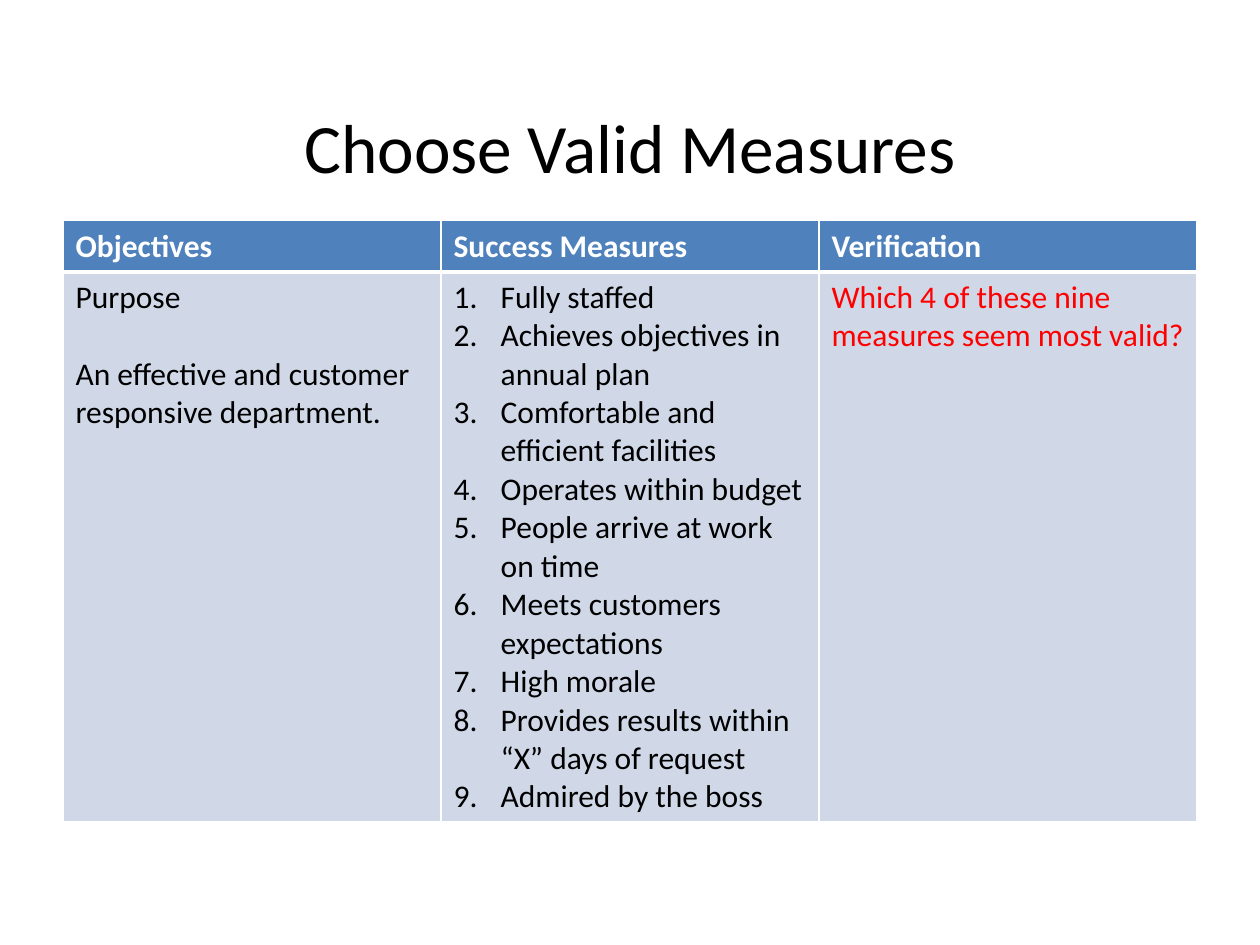
import dataclasses

import pptx
import pptx.dml.color
import pptx.enum.text
import pptx.oxml.xmlchemy
import pptx.util
from lxml import etree
from pptx.oxml.ns import qn

Cm = pptx.util.Cm
Pt = pptx.util.Pt


@dataclasses.dataclass(frozen=True)
class Theme:
    face: str = "Calibri"
    ink: str = "000000"
    white: str = "FFFFFF"
    red: str = "FF0000"
    head: str = "4F81BD"
    body: str = "D0D8E8"
    title: float = 39.6
    text: float = 18
    thin: float = 1
    thick: float = 3


class Deck:
    def __init__(self, theme):
        self.theme = theme
        self.prs = pptx.Presentation()
        self.prs.slide_width = Cm(25.4)
        self.prs.slide_height = Cm(19.05)
        self.slide = self.prs.slides.add_slide(self.prs.slide_layouts[6])

    def style(self, para, size, color, bold=False):
        look = {"name": self.theme.face, "size": Pt(size), "bold": bold}
        for run in para.runs:
            for key, value in look.items():
                setattr(run.font, key, value)
            run.font.color.rgb = pptx.dml.color.RGBColor.from_string(color)

    def title(self, text, left, top, width, height):
        box = self.slide.shapes.add_textbox(left, top, width, height)
        frame = box.text_frame
        frame.word_wrap = True
        frame.vertical_anchor = pptx.enum.text.MSO_ANCHOR.MIDDLE
        para = frame.paragraphs[0]
        para.text = text
        para.alignment = pptx.enum.text.PP_ALIGN.CENTER
        self.style(para, self.theme.title, self.theme.ink)

    def number(self, para):
        """Give the paragraph an automatic number and a hanging indent."""
        props = para._p.get_or_add_pPr()
        props.set("marL", str(Cm(0.95)))
        props.set("indent", str(-Cm(0.95)))
        etree.SubElement(props, qn("a:buFont"), typeface="+mj-lt")
        etree.SubElement(props, qn("a:buAutoNum"), type="arabicPeriod")

    def border(self, cell, widths):
        """Draw white cell edges; widths maps a side (L, R, T, B) to points."""
        props = cell._tc.get_or_add_tcPr()
        for side, width in widths.items():
            line = etree.SubElement(props, qn(f"a:ln{side}"), w=str(Pt(width)))
            fill = etree.SubElement(line, qn("a:solidFill"))
            etree.SubElement(fill, qn("a:srgbClr"), val=self.theme.white)

    def cell(self, cell, lines, fill, color, bold=False, listed=False, gap=0):
        theme = self.theme
        thin, thick = theme.thin, theme.thick
        top, low = (thin, thick) if fill == theme.head else (thick, thin)
        self.border(cell, {"L": thin, "R": thin, "T": top, "B": low})
        cell.fill.solid()
        cell.fill.fore_color.rgb = pptx.dml.color.RGBColor.from_string(fill)
        frame = cell.text_frame
        for i, line in enumerate(lines):
            para = frame.add_paragraph() if i else frame.paragraphs[0]
            para.text = line
            if i and gap:
                para.space_before = Pt(gap)
            if listed:
                self.number(para)
            self.style(para, theme.text, color, bold)

    def table(self, heads, cells, left, top, width, heights):
        shape = self.slide.shapes.add_table(
            2, len(heads), left, top, width, sum(heights))
        grid = shape.table
        grid.horz_banding = False
        for row, height in zip(grid.rows, heights):
            row.height = height
        for i, (head, form) in enumerate(zip(heads, cells)):
            grid.columns[i].width = width // len(heads)
            self.cell(grid.cell(0, i), [head], self.theme.head,
                      self.theme.white, bold=True)
            self.cell(grid.cell(1, i), fill=self.theme.body, **form)


def main():
    theme = Theme()
    deck = Deck(theme)
    left, width = Cm(1.27), Cm(22.86)
    deck.title("Choose Valid Measures", left, Cm(1.93), width, Cm(2.01))
    goals = ["Purpose", "An effective and customer responsive department."]
    tests = [
        "Fully staffed",
        "Achieves objectives in annual plan",
        "Comfortable and efficient facilities",
        "Operates within budget",
        "People arrive at work on time",
        "Meets customers expectations",
        "High morale",
        "Provides results within “X” days of request",
        "Admired by the boss",
    ]
    query = ["Which 4 of these nine measures seem most valid?"]
    deck.table(
        ["Objectives", "Success Measures", "Verification"],
        [
            {"lines": goals, "color": theme.ink, "gap": 22},
            {"lines": tests, "color": theme.ink, "listed": True},
            {"lines": query, "color": theme.red},
        ],
        left, Cm(4.45), width, [Cm(1.03), Cm(11.09)])
    deck.prs.save("out.pptx")


if __name__ == "__main__":
    main()
